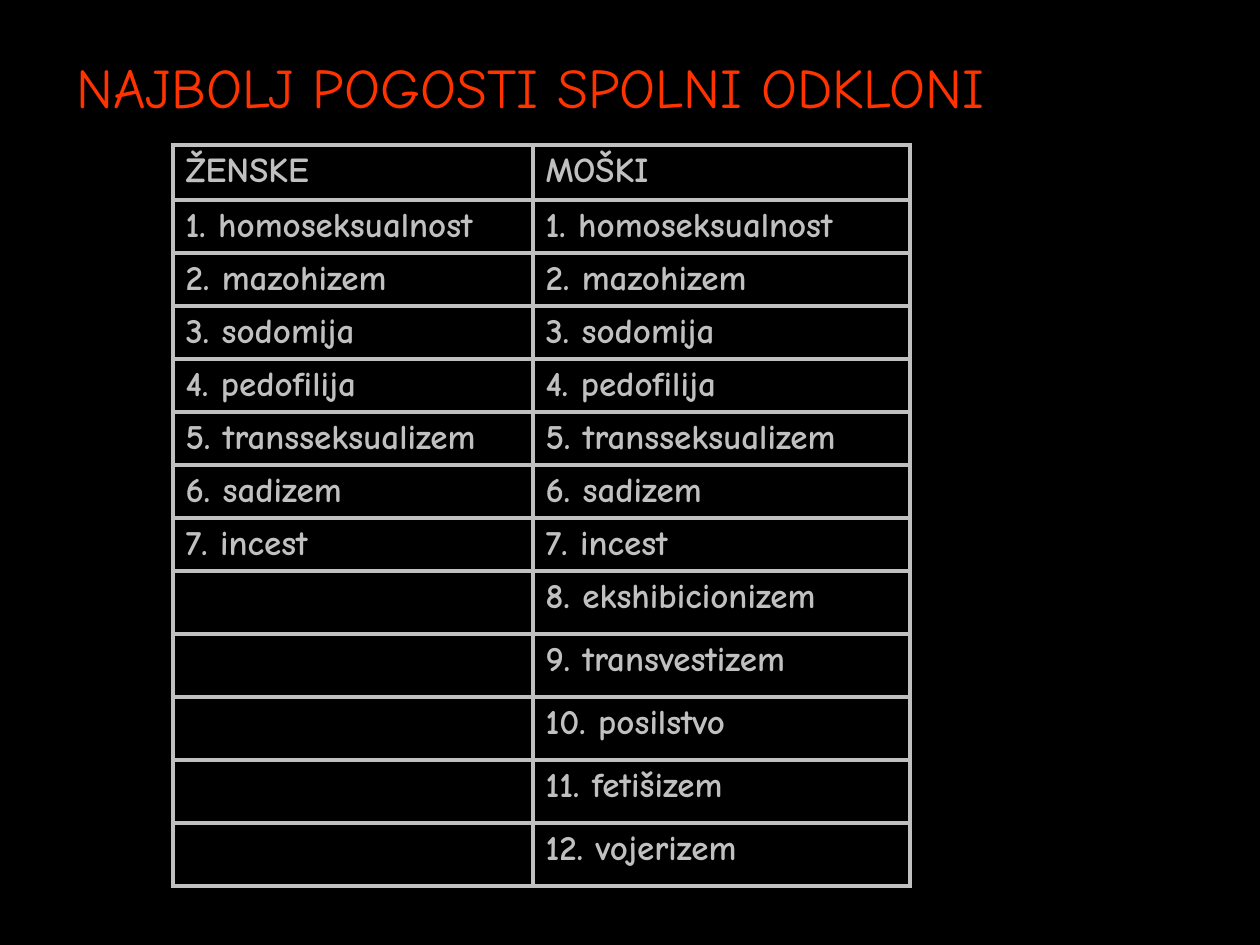
from typing import NamedTuple

import lxml.etree
import pptx
import pptx.dml.color
import pptx.enum.text
import pptx.oxml.ns
import pptx.util

EMU_PER_PX = 914400 / 126
FONT = "Comic Neue"
BLACK = pptx.dml.color.RGBColor(0x00, 0x00, 0x00)
SILVER = pptx.dml.color.RGBColor(0xC0, 0xC0, 0xC0)
ORANGE = pptx.dml.color.RGBColor(0xFF, 0x33, 0x00)

HANGING_INDENT = 48
BOTTOM_MARGIN = 4
COLUMN_WIDTHS = (360, 377)
HEADER_HEIGHT, SHARED_HEIGHT, MEN_ONLY_HEIGHT = 55, 53, 63

SHARED = ("homoseksualnost", "mazohizem", "sodomija", "pedofilija",
          "transseksualizem", "sadizem", "incest")
MEN_ONLY = ("ekshibicionizem", "transvestizem", "posilstvo", "fetišizem", "vojerizem")


class Row(NamedTuple):
    women: str
    men: str
    height: int


def px(length: int) -> pptx.util.Emu:
    return pptx.util.Emu(round(length * EMU_PER_PX))


def format_run(run, size: int, color: pptx.dml.color.RGBColor, bold: bool) -> None:
    run.font.name = FONT
    run.font.size = pptx.util.Pt(size)
    run.font.bold = bold
    run.font.color.rgb = color


def add_borders(cell) -> None:
    properties = cell._tc.get_or_add_tcPr()
    for side in ("lnL", "lnR", "lnT", "lnB"):
        line = lxml.etree.SubElement(properties, pptx.oxml.ns.qn(f"a:{side}"),
                                     w=str(pptx.util.Pt(3)))
        fill = lxml.etree.SubElement(line, pptx.oxml.ns.qn("a:solidFill"))
        lxml.etree.SubElement(fill, pptx.oxml.ns.qn("a:srgbClr"), val=str(SILVER))


def fill_cell(cell, text: str) -> None:
    add_borders(cell)
    cell.fill.background()
    cell.margin_bottom = px(BOTTOM_MARGIN)
    if not text:
        return
    cell.text_frame.text = text
    paragraph = cell.text_frame.paragraphs[0]
    indent = paragraph._p.get_or_add_pPr()
    indent.set("marL", str(px(HANGING_INDENT)))
    indent.set("indent", str(-px(HANGING_INDENT)))
    format_run(paragraph.runs[0], 20, SILVER, True)


def add_deviation_table(slide, rows: list[Row], left: int, top: int) -> None:
    table = slide.shapes.add_table(
        len(rows), len(COLUMN_WIDTHS), px(left), px(top),
        px(sum(COLUMN_WIDTHS)), px(sum(row.height for row in rows))).table
    table.first_row = table.horz_banding = False
    for column, width in zip(table.columns, COLUMN_WIDTHS):
        column.width = px(width)
    for index, row in enumerate(rows):
        table.rows[index].height = px(row.height)
        fill_cell(table.cell(index, 0), row.women)
        fill_cell(table.cell(index, 1), row.men)


def add_title(slide, text: str) -> None:
    title = slide.shapes.title
    title.left, title.top, title.width, title.height = px(64), px(46), px(1099), px(79)
    frame = title.text_frame
    frame.text = text
    frame.word_wrap = True
    frame.auto_size = pptx.enum.text.MSO_AUTO_SIZE.SHAPE_TO_FIT_TEXT
    frame.vertical_anchor = pptx.enum.text.MSO_ANCHOR.TOP
    frame.paragraphs[0].alignment = pptx.enum.text.PP_ALIGN.LEFT
    format_run(frame.paragraphs[0].runs[0], 32, ORANGE, False)


def main() -> None:
    presentation = pptx.Presentation()
    presentation.slide_width, presentation.slide_height = px(1260), px(945)
    slide = presentation.slides.add_slide(presentation.slide_layouts[5])
    slide.background.fill.solid()
    slide.background.fill.fore_color.rgb = BLACK

    # Numbered rows: those shared by both columns, then those for men alone
    rows = [Row("ŽENSKE", "MOŠKI", HEADER_HEIGHT)]
    for number, name in enumerate(SHARED + MEN_ONLY, start=1):
        entry = f"{number}. {name}"
        if name in SHARED:
            rows.append(Row(entry, entry, SHARED_HEIGHT))
        else:
            rows.append(Row("", entry, MEN_ONLY_HEIGHT))

    add_title(slide, "NAJBOLJ POGOSTI SPOLNI ODKLONI")
    add_deviation_table(slide, rows, left=173, top=145)
    presentation.save("out.pptx")


if __name__ == "__main__":
    main()
